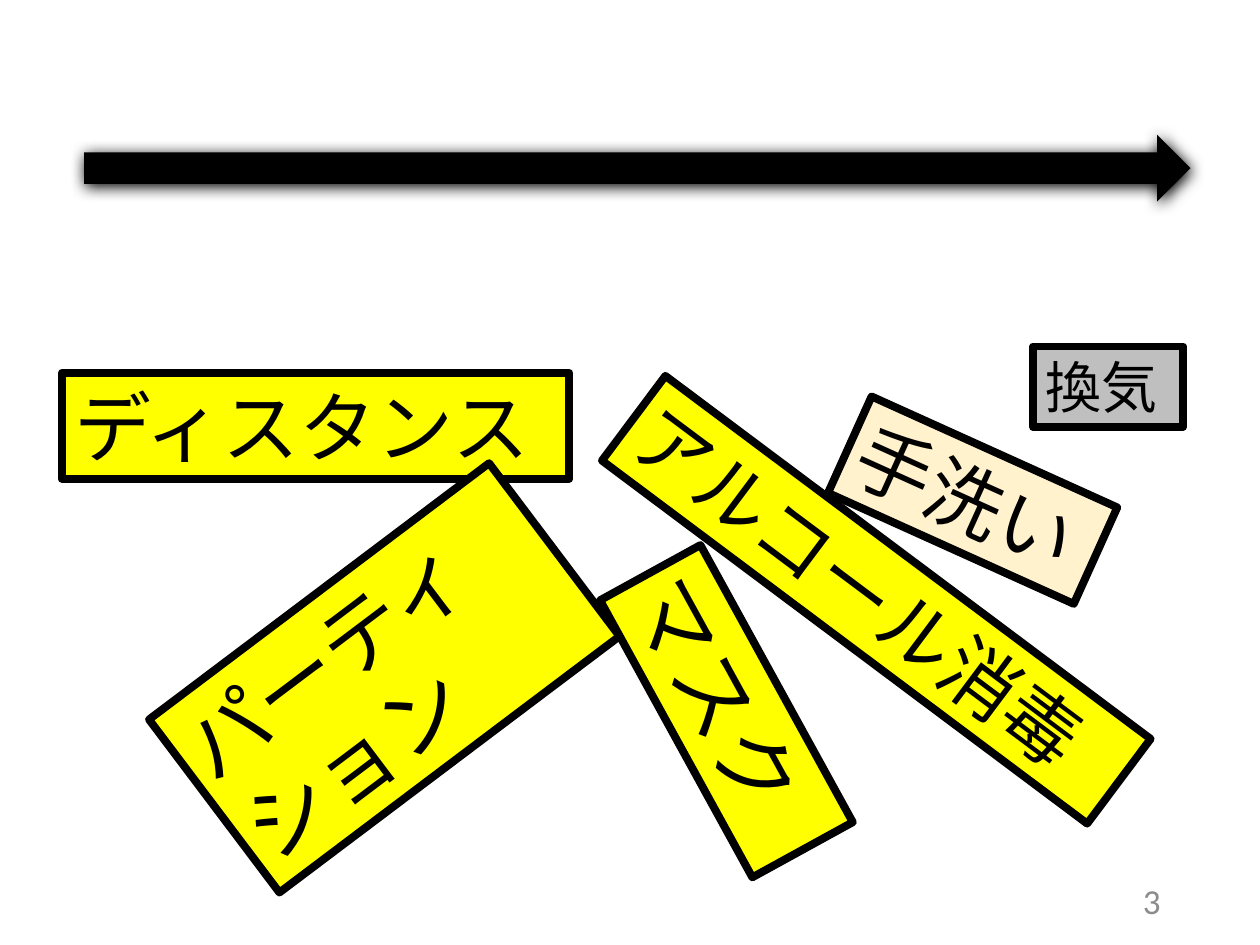
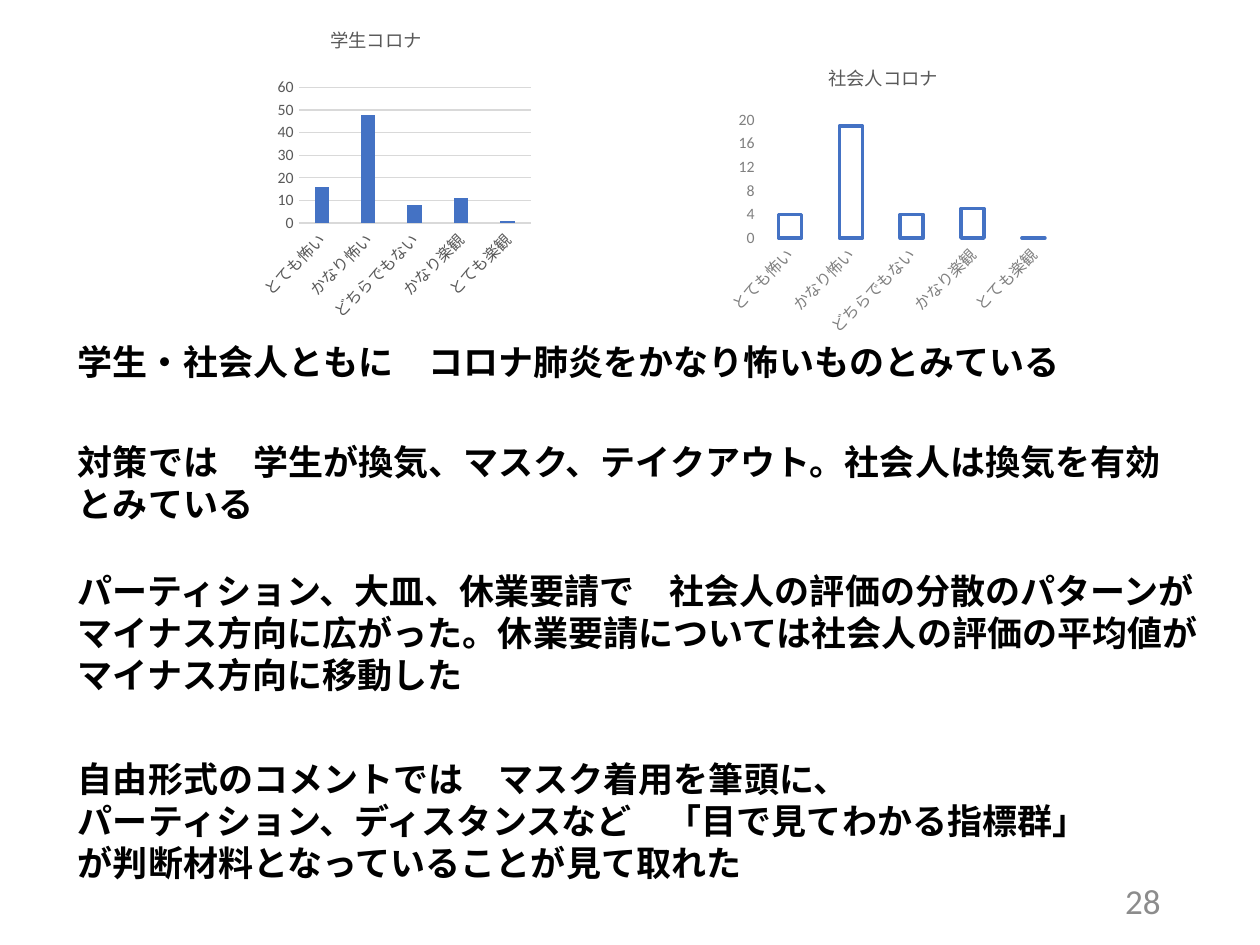
from dataclasses import dataclass
from typing import Any, Optional

import pptx
import pptx.chart.data
import pptx.dml.color
import pptx.enum.chart
import pptx.enum.shapes
import pptx.enum.text
import pptx.oxml
import pptx.oxml.ns
import pptx.util
from pptx.util import Inches

RGB = pptx.dml.color.RGBColor.from_string
Pt = pptx.util.Pt
qn = pptx.oxml.ns.qn
NS = pptx.oxml.ns.nsdecls


@dataclass(frozen=True)
class Theme:
    font: str = "Calibri"
    ink: str = "000000"
    page_ink: str = "8C8C8C"
    visible: str = "FFFF00"
    partly: str = "FFF2CC"
    unseen: str = "BFBFBF"
    bar: str = "4472C4"
    grid: str = "D9D9D9"
    dark_label: str = "595959"
    light_label: str = "808080"
    body: float = 20
    axis: float = 9
    chart_text: float = 10
    chart_title: float = 10.5
    border: float = 4.5


THEME = Theme()


@dataclass(frozen=True)
class Box:
    left: float
    top: float
    width: float
    height: float

    def inches(self) -> tuple:
        return tuple(Inches(v) for v in (self.left, self.top, self.width, self.height))


@dataclass(frozen=True)
class Card:
    text: str
    box: Box
    size: int
    fill: str
    rotation: float = 0


@dataclass(frozen=True)
class Finding:
    lines: tuple
    box: Box
    wrap: bool = True


@dataclass(frozen=True)
class Survey:
    title: str
    box: Box
    values: tuple
    maximum: int
    step: int
    gap: int
    overlap: int
    label: str
    title_at: tuple
    plot: tuple
    plot_target: str
    outlined: bool = False


CARDS = [
    Card("ディスタンス", Box(0.49, 2.96, 4.03, 0.84), 44, THEME.visible),
    Card("マスク", Box(4.51, 5.19, 2.51, 0.91), 48, THEME.visible, 61.2),
    Card("アルコール消毒", Box(4.55, 4.34, 4.81, 0.84), 44, THEME.visible, 36.8),
    Card("換気", Box(8.2, 2.75, 1.19, 0.64), 32, THEME.unseen),
    Card("手洗い", Box(6.65, 3.55, 2.14, 0.84), 44, THEME.partly, 24.3),
    Card("パーティション", Box(1.36, 4.52, 3.38, 1.72), 48, THEME.visible, 323),
]

ANSWERS = ("とても怖い", "かなり怖い", "どちらでもない", "かなり楽観", "とても楽観")
SURVEYS = [
    Survey("学生コロナ", Box(1.84, 0.17, 2.79, 2.76), (16, 48, 8, 11, 1), 60, 10, 219, -27,
           THEME.dark_label, (0.27, 0), (0.19, 0.19, 0.66, 0.39), "inner"),
    Survey("社会人コロナ", Box(5.71, 0.42, 2.79, 2.3), (4, 19, 4, 5, 0), 20, 4, 164, -35,
           THEME.light_label, (0.3, 0.02), (0.02, 0.2, 0.96, 0.78), "outer", outlined=True),
]

FINDINGS = [
    Finding(("学生・社会人ともに　コロナ肺炎をかなり怖いものとみている",),
            Box(0.52, 2.65, 8.83, 0.44)),
    Finding(("対策では　学生が換気、マスク、テイクアウト。社会人は換気を有効とみている",),
            Box(0.52, 3.45, 9.01, 0.77)),
    Finding(("パーティション、大皿、休業要請で　社会人の評価の分散のパターンがマイナス方向に広がった。"
             "休業要請については社会人の評価の平均値がマイナス方向に移動した",),
            Box(0.52, 4.47, 9.23, 1.11)),
    Finding(("自由形式のコメントでは　マスク着用を筆頭に、",
             "パーティション、ディスタンスなど　「目で見てわかる指標群」",
             "が判断材料となっていることが見て取れた"),
            Box(0.52, 5.96, 9.18, 1.11), wrap=False),
]


def apply(target: Any, **values: Any) -> None:
    for name, value in values.items():
        setattr(target, name, value)


def set_font(font: Any, size: float, color: str, bold: bool = False) -> None:
    apply(font, name=THEME.font, size=Pt(size), bold=bold)
    font.color.rgb = RGB(color)


def set_line(line: Any, color: Optional[str], width: float = 0.75) -> None:
    if color is None:
        line.fill.background()
    else:
        line.color.rgb = RGB(color)
        line.width = Pt(width)


def set_fill(fill: Any, color: str) -> None:
    fill.solid()
    fill.fore_color.rgb = RGB(color)


def set_join(sp: Any, join: str) -> None:
    ln = sp.element.spPr.find(qn("a:ln"))
    limit = ' lim="800000"' if join == "miter" else ""
    ln.append(pptx.oxml.parse_xml(f'<a:{join} {NS("a")}{limit}/>'))


def add_text(s: Any, box: Box, lines: tuple, size: float, color: str = THEME.ink,
             bold: bool = False, wrap: bool = True, align: Any = None) -> Any:
    sp = s.shapes.add_textbox(*box.inches())
    tf = sp.text_frame
    apply(tf, word_wrap=wrap, auto_size=pptx.enum.text.MSO_AUTO_SIZE.SHAPE_TO_FIT_TEXT)
    for i, line in enumerate(lines):
        p = tf.paragraphs[0] if i == 0 else tf.add_paragraph()
        p.alignment = align
        r = p.add_run()
        r.text = line
        set_font(r.font, size, color, bold)
    for latin in sp.element.findall(".//" + qn("a:latin")):
        latin.addnext(pptx.oxml.parse_xml(f'<a:ea {NS("a")} typeface="{THEME.font}"/>'))
    return sp


def add_page_number(s: Any, number: int) -> None:
    sp = add_text(s, Box(7.06, 6.95, 2.25, 0.4), (str(number),), THEME.body,
                  THEME.page_ink, align=pptx.enum.text.PP_ALIGN.RIGHT)
    apply(sp.text_frame, auto_size=pptx.enum.text.MSO_AUTO_SIZE.NONE,
          vertical_anchor=pptx.enum.text.MSO_ANCHOR.MIDDLE)


def add_card(s: Any, card: Card) -> None:
    sp = add_text(s, card.box, (card.text,), card.size)
    sp.rotation = card.rotation
    set_fill(sp.fill, card.fill)
    set_line(sp.line, THEME.ink, THEME.border)
    set_join(sp, "round")


def add_scale_arrow(s: Any) -> None:
    sp = s.shapes.add_shape(pptx.enum.shapes.MSO_SHAPE.RIGHT_ARROW,
                            *Box(0.71, 1.17, 8.68, 0.33).inches())
    set_fill(sp.fill, THEME.ink)
    set_line(sp.line, THEME.ink, 6)
    set_join(sp, "miter")
    sp.shadow.inherit = False
    sp.element.spPr.find(qn("a:effectLst")).append(pptx.oxml.parse_xml(
        f'<a:outerShdw {NS("a")} blurRad="{Pt(8.5)}" dist="{Pt(1)}" dir="5400000" '
        f'algn="t" rotWithShape="0"><a:srgbClr val="{THEME.ink}"/></a:outerShdw>'))


def layout_xml(values: tuple, target: Optional[str]) -> Any:
    """Manual chart layout: two values place a title, four place the plot."""
    head = f'<c:layoutTarget val="{target}"/>' if target else ""
    modes = '<c:xMode val="edge"/><c:yMode val="edge"/>'
    sizes = "".join(f'<c:{n} val="{v}"/>' for n, v in zip("xywh", values))
    return pptx.oxml.parse_xml(
        f'<c:layout {NS("c")}><c:manualLayout>{head}{modes}{sizes}'
        '</c:manualLayout></c:layout>')


def place(parent: Any, values: tuple, target: Optional[str] = None) -> None:
    for layout in parent.findall(qn("c:layout")):
        parent.remove(layout)
    parent.insert(0 if target else 1, layout_xml(values, target))


def add_survey(s: Any, survey: Survey) -> None:
    data = pptx.chart.data.CategoryChartData()
    data.categories = ANSWERS
    data.add_series("Series 1", survey.values)
    chart = s.shapes.add_chart(pptx.enum.chart.XL_CHART_TYPE.COLUMN_CLUSTERED,
                               *survey.box.inches(), data).chart
    set_font(chart.font, THEME.chart_text, THEME.ink)
    apply(chart, has_legend=False, has_title=True)

    tf = chart.chart_title.text_frame
    tf.text = survey.title
    set_font(tf.paragraphs[0].runs[0].font, THEME.chart_title, THEME.dark_label)
    root = chart.element
    place(root.find(".//" + qn("c:title")), survey.title_at)
    place(root.find(".//" + qn("c:plotArea")), survey.plot, survey.plot_target)

    plot = chart.plots[0]
    apply(plot, gap_width=survey.gap, overlap=survey.overlap, vary_by_categories=False)
    bars = plot.series[0].format
    if survey.outlined:
        bars.fill.background()
        set_line(bars.line, THEME.bar, 2)
    else:
        set_fill(bars.fill, THEME.bar)

    ticks = pptx.enum.chart.XL_TICK_MARK.NONE
    for axis in (chart.category_axis, chart.value_axis):
        apply(axis, major_tick_mark=ticks, minor_tick_mark=ticks, has_major_gridlines=False)
        set_font(axis.tick_labels.font, THEME.axis, survey.label)
        set_line(axis.format.line, None)
    labels = root.find(".//" + qn("c:catAx")).find(qn("c:txPr"))
    labels.find(qn("a:bodyPr")).set("rot", str(-45 * 60000))
    apply(chart.value_axis, minimum_scale=0, maximum_scale=survey.maximum,
          major_unit=survey.step, has_major_gridlines=not survey.outlined)
    if not survey.outlined:
        set_line(chart.category_axis.format.line, THEME.grid)
        set_line(chart.value_axis.major_gridlines.format.line, THEME.grid)


def build_measures(s: Any) -> None:
    for card in CARDS:
        add_card(s, card)
    add_scale_arrow(s)
    add_page_number(s, 3)


def build_findings(s: Any) -> None:
    for survey in SURVEYS:
        add_survey(s, survey)
    for finding in FINDINGS:
        add_text(s, finding.box, finding.lines, THEME.body, bold=True, wrap=finding.wrap)
    add_page_number(s, 28)


def main() -> None:
    prs = pptx.Presentation()
    apply(prs, slide_width=Inches(10), slide_height=Inches(7.5))
    for build in (build_measures, build_findings):
        build(prs.slides.add_slide(prs.slide_layouts[6]))
    prs.save("out.pptx")


if __name__ == "__main__":
    main()
